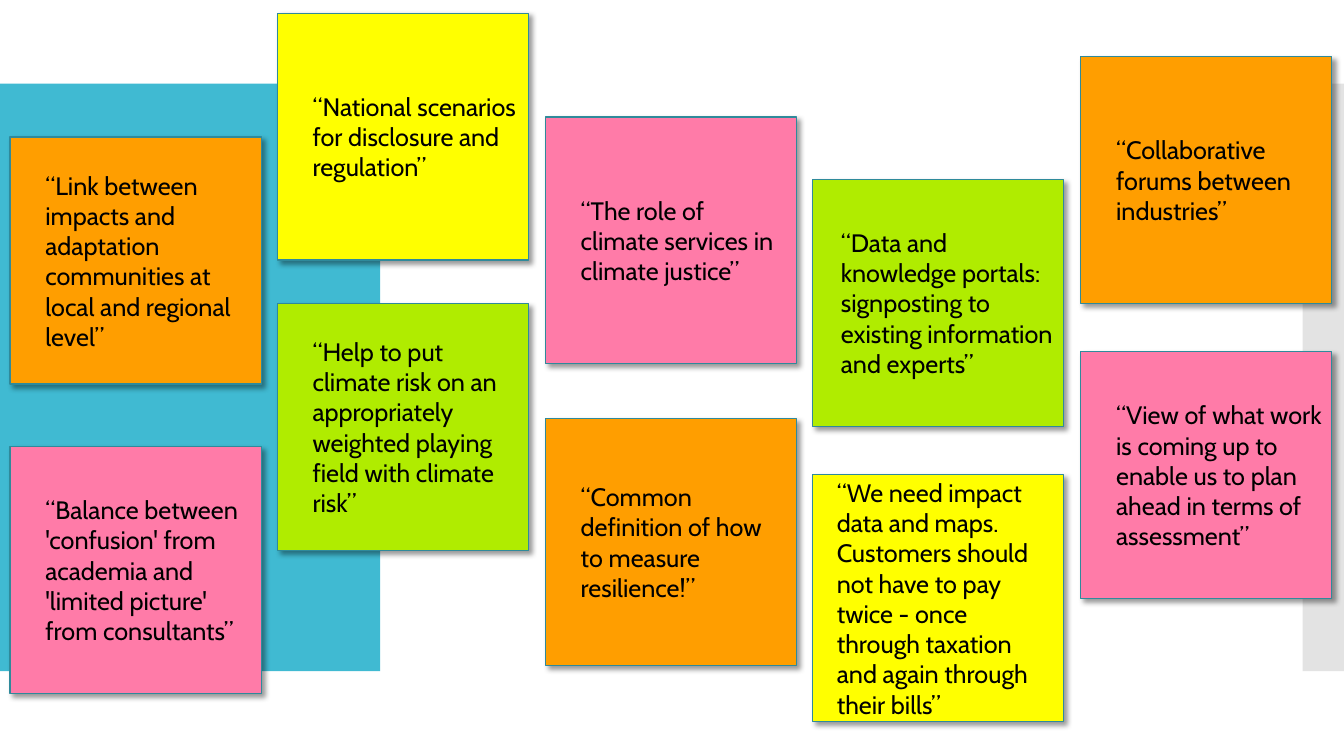
from lxml import etree
from pptx import Presentation
from pptx.dml.color import RGBColor
from pptx.enum.shapes import MSO_SHAPE
from pptx.enum.text import MSO_ANCHOR, PP_ALIGN
from pptx.oxml.ns import qn
from pptx.util import Pt

RECTANGLE = MSO_SHAPE.RECTANGLE
MIDDLE = MSO_ANCHOR.MIDDLE
LEFT = PP_ALIGN.LEFT

TEAL = RGBColor(0x40, 0xBA, 0xD2)
GREY = RGBColor(0xC8, 0xC8, 0xC8)
YELLOW = RGBColor(0xFF, 0xFF, 0x00)
ORANGE = RGBColor(0xFF, 0x9E, 0x00)
PINK = RGBColor(0xFF, 0x7B, 0xA8)
GREEN = RGBColor(0xB0, 0xEC, 0x00)
OUTLINE = RGBColor(0x2F, 0x8A, 0x9B)
BLACK = RGBColor(0x00, 0x00, 0x00)

EMU_PER_PX = 9144
SLIDE_WIDTH, SLIDE_HEIGHT = 1333, 750
BAND_TOP, BAND_HEIGHT = 83, 583
NOTE_WIDTH, NOTE_HEIGHT = 249, 245
FIRST_LEFT, LAST_LEFT, COLUMN_GAPS = 10, 1072, 4

NOTES = [
    (1, 13, YELLOW, 35, 10, "“National scenarios for disclosure and regulation”"),
    (0, 136, ORANGE, 35, 10,
     "“Link between impacts and adaptation communities at local and regional level”"),
    (0, 443, PINK, 35, 10,
     "“Balance between 'confusion' from academia and 'limited picture' from consultants”"),
    (1, 301, GREEN, 35, 10,
     "“Help to put climate risk on an appropriately weighted playing field with climate risk”"),
    (3, 471, YELLOW, 24, 10,
     "“We need impact data and maps. Customers should not have to pay twice - once "
     "through taxation and again through their bills”"),
    (2, 415, ORANGE, 35, 16, "“Common definition of how to measure resilience!”"),
    (2, 116, PINK, 35, 10, "“The role of climate services in climate justice”"),
    (4, 56, ORANGE, 35, 10, "“Collaborative forums between industries”"),
    (3, 178, GREEN, 28, 10,
     "“Data and knowledge portals: signposting to existing information and experts”"),
    (4, 349, PINK, 35, 10,
     "“View of what work is coming up to enable us to plan ahead in terms of assessment”"),
]


def px(length):
    """Turn whole px into EMU."""
    return length * EMU_PER_PX


class StickyBoard:
    """Draw colour bands and sticky notes on one slide."""

    font_name = "Cabin"
    font_size = Pt(18)
    line_width = Pt(0.85)

    def __init__(self, slide):
        self.slide = slide

    def rectangle(self, left, top, width, height, color):
        """Add a plain filled rectangle without line or shadow."""
        shape = self.slide.shapes.add_shape(
            RECTANGLE, px(left), px(top), px(width), px(height))
        shape.shadow.inherit = False
        shape.fill.solid()
        shape.fill.fore_color.rgb = color
        shape.line.fill.background()
        return shape

    def band(self, left, width, color, opacity=100):
        """Add a background band with the given opacity in percent."""
        shape = self.rectangle(left, BAND_TOP, width, BAND_HEIGHT, color)
        if opacity < 100:
            color_element = shape._element.spPr.find(".//" + qn("a:srgbClr"))
            etree.SubElement(color_element, qn("a:alpha"), val=str(opacity * 1000))

    def drop_shadow(self, shape):
        """Add a soft black shadow to the lower right."""
        effects = shape._element.spPr.find(qn("a:effectLst"))
        shadow = etree.SubElement(
            effects, qn("a:outerShdw"), blurRad=str(Pt(4)), dist=str(Pt(3)),
            dir=str(45 * 60000), algn="tl", rotWithShape="0")
        color_element = etree.SubElement(shadow, qn("a:srgbClr"), val=str(BLACK))
        etree.SubElement(color_element, qn("a:alpha"), val="40000")

    def note(self, column, top, color, inset_left, inset_right, text):
        """Add a sticky note with its quotation."""
        left = FIRST_LEFT + column * (LAST_LEFT - FIRST_LEFT) // COLUMN_GAPS
        shape = self.rectangle(left, top, NOTE_WIDTH, NOTE_HEIGHT, color)
        shape.line.color.rgb = OUTLINE
        shape.line.width = self.line_width
        self.drop_shadow(shape)
        frame = shape.text_frame
        frame.word_wrap = True
        frame.vertical_anchor = MIDDLE
        frame.margin_left, frame.margin_right = px(inset_left), px(inset_right)
        frame.margin_top = frame.margin_bottom = px(5)
        paragraph = frame.paragraphs[0]
        paragraph.alignment = LEFT
        run = paragraph.add_run()
        run.text = text
        run.font.name = self.font_name
        run.font.size = self.font_size
        run.font.color.rgb = BLACK


def main():
    """Build and save the slide."""
    presentation = Presentation()
    presentation.slide_width = px(SLIDE_WIDTH)
    presentation.slide_height = px(SLIDE_HEIGHT)
    board = StickyBoard(presentation.slides.add_slide(presentation.slide_layouts[6]))
    board.band(0, 377, TEAL)
    board.band(1292, SLIDE_WIDTH - 1292, GREY, opacity=50)
    for note in NOTES:
        board.note(*note)
    presentation.save("out.pptx")


if __name__ == "__main__":
    main()
